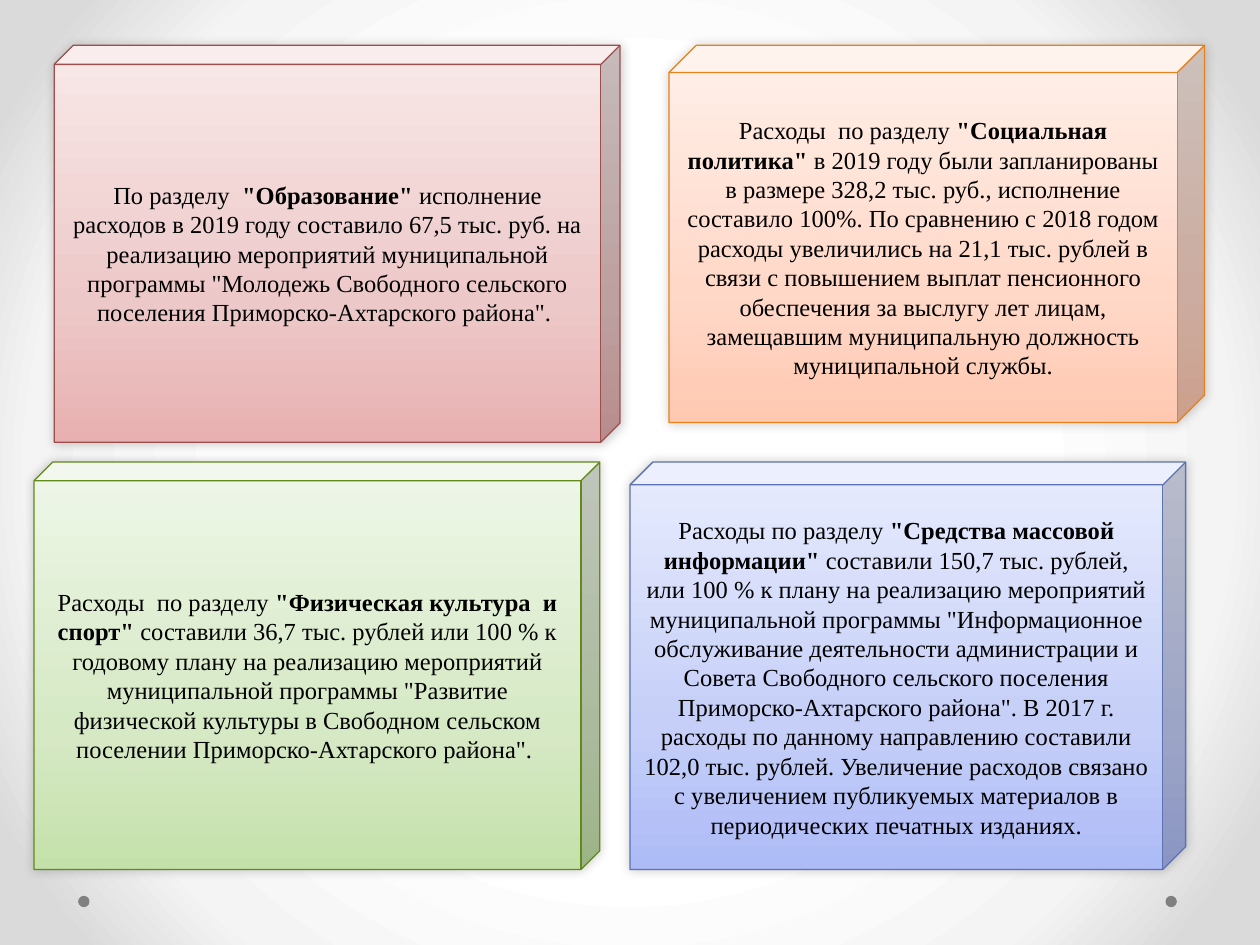
"""Build a slide with four budget spending sections shown as blocks."""
from dataclasses import dataclass

from lxml import etree
from pptx import Presentation
from pptx.dml.color import RGBColor
from pptx.enum.shapes import MSO_SHAPE
from pptx.enum.text import MSO_ANCHOR, PP_ALIGN
from pptx.oxml.ns import qn
from pptx.util import Inches, Pt

CUBE, DOT = MSO_SHAPE.CUBE, MSO_SHAPE.OVAL
MIDDLE, CENTER = MSO_ANCHOR.MIDDLE, PP_ALIGN.CENTER
WIDTH, HEIGHT = 10, 7.5


@dataclass(frozen=True)
class Theme:
    """Hold the colours and type sizes of the slide."""
    font: str = "Times New Roman"
    size: float = 14
    ink: str = "000000"
    dot: str = "808080"
    outline: float = 0.75
    backdrop: tuple = ((50, "FFFFFF"), (76, "F4F4F4"), (92, "DADADA"))
    education: tuple = ("9A4E4E", "E8B0B0", "EDC8C8", "F9E9E9")
    welfare: tuple = ("E6811C", "FFC9B1", "FFD8C8", "FFF0EA")
    sport: tuple = ("62891C", "C5E1AB", "D6E9C5", "EFF7E9")
    media: tuple = ("5C72B2", "ADBBF6", "C5CFF8", "E8ECFD")


def add_node(parent, tag, **attributes):
    """Append a DrawingML element with the given attributes."""
    values = {key: str(value) for key, value in attributes.items()}
    return etree.SubElement(parent, qn(f"a:{tag}"), values)


def set_gradient(fill, owner, stops):
    """Start a gradient fill with the given stops and return its element."""
    fill.gradient()
    gradient = next(owner.iter(qn("a:gradFill")))
    for child in list(gradient):
        gradient.remove(child)
    stop_list = add_node(gradient, "gsLst")
    for position, colour in stops:
        stop = add_node(stop_list, "gs", pos=position * 1000)
        add_node(stop, "srgbClr", val=colour)
    return gradient


class SectionSlide:
    """Draw on one slide, with lengths given as shares of its size."""

    def __init__(self, slide, theme):
        """Keep the slide and its theme."""
        self.slide = slide
        self.theme = theme

    def backdrop(self):
        """Fill the background with a circular gradient."""
        gradient = set_gradient(self.slide.background.fill, self.slide.element,
                                self.theme.backdrop)
        circle = add_node(gradient, "path", path="circle")
        add_node(circle, "fillToRect", l=50000, t=50000, r=50000, b=50000)

    def place(self, preset, left, top, width, height):
        """Add a preset shape at the given shares of the slide."""
        shape = self.slide.shapes.add_shape(
            preset, Inches(left * WIDTH), Inches(top * HEIGHT),
            Inches(width * WIDTH), Inches(height * HEIGHT))
        shape.shadow.inherit = False
        return shape

    def dot(self, left, top):
        """Add a small round footer mark."""
        mark = self.place(DOT, left, top, 0.009, 0.012)
        mark.fill.solid()
        mark.fill.fore_color.rgb = RGBColor.from_string(self.theme.dot)
        mark.line.fill.background()

    def block(self, area, depth, colours, texts):
        """Add a shaded cube whose middle run is bold."""
        cube = self.place(CUBE, *area)
        cube.adjustments[0] = depth
        outline, *shades = colours
        gradient = set_gradient(cube.fill, cube.element, zip((0, 35, 100), shades))
        add_node(gradient, "lin", ang=270 * 60000, scaled=0)
        cube.line.color.rgb = RGBColor.from_string(outline)
        cube.line.width = Pt(self.theme.outline)
        self.soften(cube)
        self.caption(cube.text_frame, texts)

    def soften(self, cube):
        """Give a cube a soft shadow."""
        effects = next(cube.element.iter(qn("a:effectLst")))
        shadow = add_node(effects, "outerShdw", blurRad=int(Pt(6)), dist=0,
                          dir=315 * 60000, rotWithShape=0)
        colour = add_node(shadow, "srgbClr", val=self.theme.ink)
        add_node(colour, "alpha", val=20000)

    def caption(self, frame, texts):
        """Set a centred paragraph of lead, section name and details."""
        frame.word_wrap = True
        frame.vertical_anchor = MIDDLE
        paragraph = frame.paragraphs[0]
        paragraph.alignment = CENTER
        for text, bold in zip(texts, (False, True, False)):
            run = paragraph.add_run()
            run.text = text
            run.font.name = self.theme.font
            run.font.size = Pt(self.theme.size)
            run.font.bold = bold
            run.font.color.rgb = RGBColor.from_string(self.theme.ink)


def main():
    """Build and save the presentation."""
    theme = Theme()
    deck = Presentation()
    deck.slide_width, deck.slide_height = Inches(WIDTH), Inches(HEIGHT)
    page = SectionSlide(deck.slides.add_slide(deck.slide_layouts[6]), theme)
    upper, lower = 0.048, 0.489
    sections = (
        ((0.043, upper, 0.449, 0.42), 0.048, theme.education, (
            "По разделу",
            "  \"Образование\" ",
            "исполнение расходов в 2019 году составило 67,5 тыс. руб. на "
            "реализацию мероприятий муниципальной программы \"Молодежь "
            "Свободного сельского поселения Приморско-Ахтарского района\". ")),
        ((0.531, upper, 0.425, 0.399), 0.072, theme.welfare, (
            "Расходы  по разделу ",
            "\"Социальная политика\" ",
            "в 2019 году были запланированы в размере 328,2 тыс. руб., "
            "исполнение составило 100%. По сравнению с 2018 годом расходы "
            "увеличились на 21,1 тыс. рублей в связи с повышением выплат "
            "пенсионного обеспечения за выслугу лет лицам, замещавшим "
            "муниципальную должность муниципальной службы.")),
        ((0.027, lower, 0.449, 0.431), 0.046, theme.sport, (
            "Расходы  по разделу ",
            "\"Физическая культура  и спорт\" ",
            "составили 36,7 тыс. рублей или 100 % к годовому плану на "
            "реализацию мероприятий муниципальной программы \"Развитие "
            "физической культуры в Свободном сельском поселении "
            "Приморско-Ахтарского района\". ")),
        ((0.5, lower, 0.441, 0.431), 0.056, theme.media, (
            "Расходы по разделу ",
            "\"Средства массовой информации\" ",
            "составили 150,7 тыс. рублей, или 100 % к плану на реализацию "
            "мероприятий муниципальной программы \"Информационное "
            "обслуживание деятельности администрации и Совета Свободного "
            "сельского поселения Приморско-Ахтарского района\". В 2017 г. "
            "расходы по данному направлению составили 102,0 тыс. рублей. "
            "Увеличение расходов связано с увеличением публикуемых "
            "материалов в периодических печатных изданиях.")),
    )
    page.backdrop()
    for left in (0.925, 0.062):
        page.dot(left, 0.948)
    for section in sections:
        page.block(*section)
    deck.save("out.pptx")


if __name__ == "__main__":
    main()
